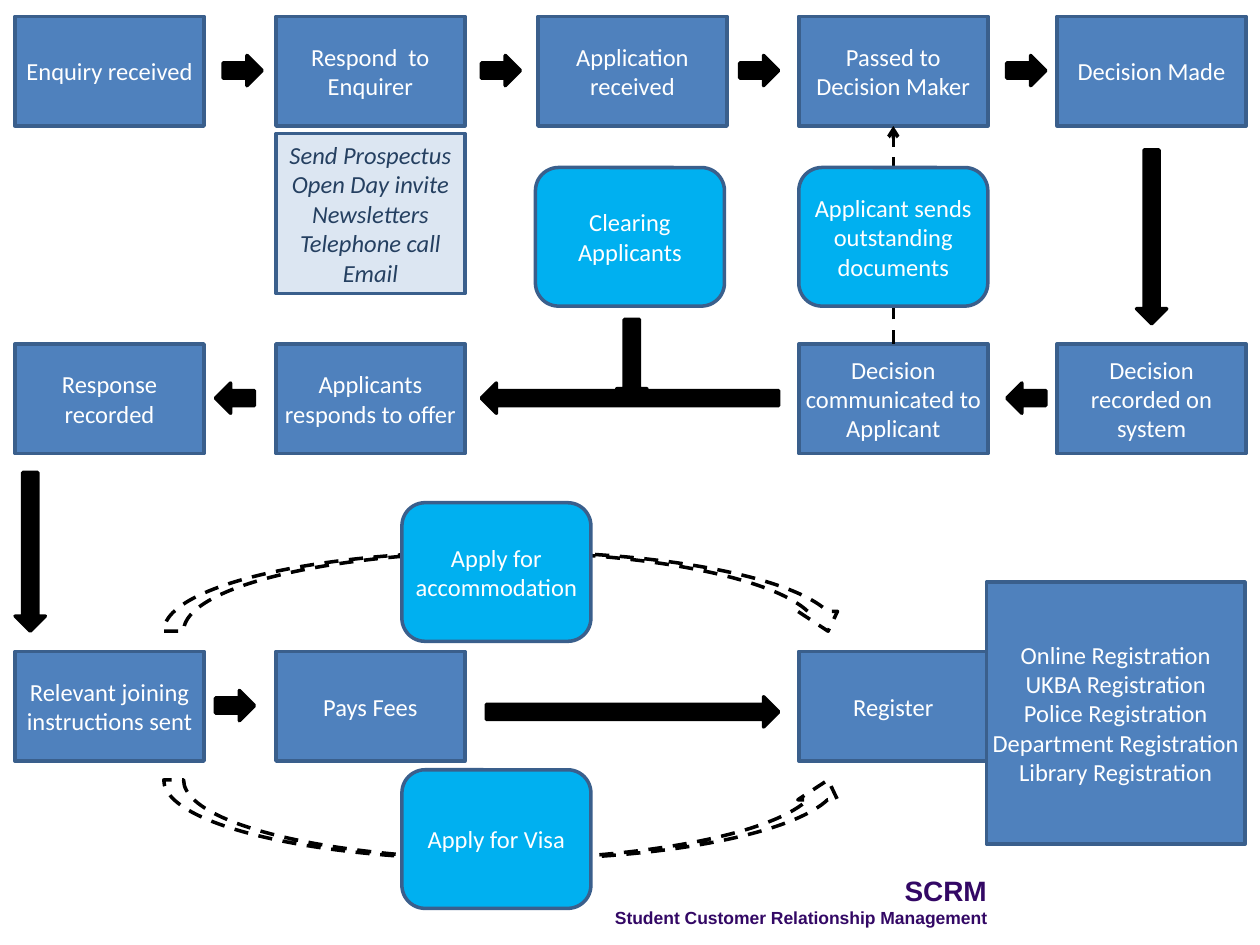
from dataclasses import dataclass

from lxml.etree import SubElement
from pptx import Presentation
from pptx.dml.color import RGBColor
from pptx.enum.dml import MSO_LINE
from pptx.enum.shapes import MSO_CONNECTOR, MSO_SHAPE
from pptx.enum.text import MSO_ANCHOR, PP_ALIGN
from pptx.oxml.ns import qn
from pptx.util import Pt


@dataclass(frozen=True)
class Theme:
    step: RGBColor = RGBColor(0x4F, 0x81, 0xBD)
    side_step: RGBColor = RGBColor(0x00, 0xB0, 0xF0)
    detail: RGBColor = RGBColor(0xDC, 0xE6, 0xF2)
    outline: RGBColor = RGBColor(0x3A, 0x5F, 0x8C)
    arrow: RGBColor = RGBColor(0x00, 0x00, 0x00)
    light_text: RGBColor = RGBColor(0xFF, 0xFF, 0xFF)
    detail_text: RGBColor = RGBColor(0x25, 0x40, 0x61)
    caption: RGBColor = RGBColor(0x33, 0x08, 0x65)
    body_font: str = "Calibri"
    caption_font: str = "Arial"
    body_size: int = 14
    caption_size: int = 16
    subcaption_size: int = 10
    line_width: int = 2


THEME = Theme()

# Flow grid, in points
COLUMNS = (8.64, 157.68, 307.44, 456.48, 604.08)
ROWS = (9.36, 196.56, 372.24)
STEP_WIDTH, STEP_HEIGHT = 108, 62.64
SIDE_HEIGHT = 79.2
ARROW_LENGTH, ARROW_THICKNESS = 22.32, 17.28

STEPS = (  # column, row, text
    (0, 0, "Enquiry received"),
    (1, 0, "Respond  to Enquirer"),
    (2, 0, "Application received"),
    (3, 0, "Passed to Decision Maker"),
    (4, 0, "Decision Made"),
    (4, 1, "Decision recorded on system"),
    (3, 1, "Decision communicated to Applicant"),
    (1, 1, "Applicants responds to offer"),
    (0, 1, "Response recorded"),
    (0, 2, "Relevant joining instructions sent"),
    (1, 2, "Pays Fees"),
    (3, 2, "Register"),
)
SIDE_STEPS = (  # left, top, text
    (306, 95.76, "Clearing Applicants"),
    (456.48, 95.76, "Applicant sends outstanding documents"),
    (229.68, 287.28, "Apply for accommodation"),
    (229.68, 439.92, "Apply for Visa"),
)
RIGHT_ARROWS = (  # left, top, length
    (127.44, 31.68, ARROW_LENGTH),
    (275.04, 31.68, ARROW_LENGTH),
    (422.64, 31.68, ARROW_LENGTH),
    (575.28, 31.68, ARROW_LENGTH),
    (123.12, 394.56, ARROW_LENGTH),
    (277.92, 398.16, 167.04),
)
LEFT_ARROWS = (
    (123.12, 218.88, ARROW_LENGTH),
    (275.04, 218.88, 169.92),
    (575.28, 218.88, ARROW_LENGTH),
)
DOWN_ARROWS = (
    (8.64, 270, 90.72),
    (649.44, 85.68, 99.36),
    (352.44, 182.52, 48.24),
)
RESPONSES = ("Send Prospectus", "Open Day invite", "Newsletters",
             "Telephone call", "Email")
REGISTRATIONS = ("Online Registration", "UKBA Registration",
                 "Police Registration", "Department Registration",
                 "Library Registration")


def add_outlined(slide, kind, left, top, width, height, fill, line):
    shape = slide.shapes.add_shape(kind, Pt(left), Pt(top), Pt(width), Pt(height))
    shape.shadow.inherit = False
    if fill is None:
        shape.fill.background()
    else:
        shape.fill.solid()
        shape.fill.fore_color.rgb = fill
    shape.line.color.rgb = line
    shape.line.width = Pt(THEME.line_width)
    return shape


def add_text_run(paragraph, text, font, size, color, bold=False, italic=False):
    run = paragraph.add_run()
    run.text = text
    run.font.name = font
    run.font.size = Pt(size)
    run.font.color.rgb = color
    run.font.bold = bold
    run.font.italic = italic


def add_box(slide, left, top, lines, width=STEP_WIDTH, height=STEP_HEIGHT,
            kind=MSO_SHAPE.FLOWCHART_PROCESS, fill=THEME.step,
            text_color=THEME.light_text, italic=False):
    box = add_outlined(slide, kind, left, top, width, height, fill, THEME.outline)
    frame = box.text_frame
    frame.word_wrap = True
    frame.vertical_anchor = MSO_ANCHOR.MIDDLE
    frame.margin_left = frame.margin_right = Pt(2.88)
    frame.margin_top = frame.margin_bottom = Pt(3.6)
    for index, line in enumerate(lines):
        paragraph = frame.add_paragraph() if index else frame.paragraphs[0]
        paragraph.alignment = PP_ALIGN.CENTER
        add_text_run(paragraph, line, THEME.body_font, THEME.body_size,
                     text_color, italic=italic)
    return box


def add_curved_arrow(slide, kind, top):
    arrow = add_outlined(slide, kind, 93.6, top, 390.96, 45.36, None, THEME.arrow)
    arrow.line.dash_style = MSO_LINE.DASH


def add_dashed_link(slide, start, end):
    """Join the top of one box to the bottom of another."""
    link = slide.shapes.add_connector(MSO_CONNECTOR.STRAIGHT, 0, 0, 0, 0)
    link.begin_connect(start, 0)
    link.end_connect(end, 2)
    link.line.color.rgb = THEME.arrow
    link.line.width = Pt(THEME.line_width)
    link.line.dash_style = MSO_LINE.DASH
    properties = link.line._get_or_add_ln()
    SubElement(properties, qn("a:tailEnd"), type="arrow")
    SubElement(properties.getparent(), qn("a:effectLst"))


def add_caption(slide):
    caption = slide.shapes.add_textbox(Pt(287.28), Pt(500.4), Pt(283.68), Pt(28.8))
    frame = caption.text_frame
    frame.word_wrap = True
    frame.vertical_anchor = MSO_ANCHOR.MIDDLE
    paragraph = frame.paragraphs[0]
    paragraph.alignment = PP_ALIGN.RIGHT
    add_text_run(paragraph, "SCRM", THEME.caption_font, THEME.caption_size,
                 THEME.caption, bold=True)
    paragraph.add_line_break()
    add_text_run(paragraph, "Student Customer Relationship Management",
                 THEME.caption_font, THEME.subcaption_size, THEME.caption, bold=True)


def main():
    presentation = Presentation()
    presentation.slide_width, presentation.slide_height = Pt(720), Pt(540)
    slide = presentation.slides.add_slide(presentation.slide_layouts[6])

    # Dashed side routes, behind the boxes
    add_curved_arrow(slide, MSO_SHAPE.CURVED_UP_ARROW, 445.68)
    add_curved_arrow(slide, MSO_SHAPE.CURVED_DOWN_ARROW, 315.36)

    # Main steps and the link back to the decision maker
    steps = {(column, row): add_box(slide, COLUMNS[column], ROWS[row], [text])
             for column, row, text in STEPS}
    add_dashed_link(slide, steps[3, 1], steps[3, 0])

    # Side steps
    for left, top, text in SIDE_STEPS:
        add_box(slide, left, top, [text], height=SIDE_HEIGHT,
                kind=MSO_SHAPE.FLOWCHART_ALTERNATE_PROCESS, fill=THEME.side_step)

    # Block arrows
    for kind, arrows in ((MSO_SHAPE.RIGHT_ARROW, RIGHT_ARROWS),
                         (MSO_SHAPE.LEFT_ARROW, LEFT_ARROWS),
                         (MSO_SHAPE.DOWN_ARROW, DOWN_ARROWS)):
        for left, top, length in arrows:
            size = (length, ARROW_THICKNESS)
            if kind == MSO_SHAPE.DOWN_ARROW:
                size = size[::-1]
            add_outlined(slide, kind, left, top, *size, THEME.arrow, THEME.arrow)

    # Detail panels
    add_box(slide, 563.76, 332.64, REGISTRATIONS, width=147.6, height=149.76)
    add_box(slide, COLUMNS[1], 76.32, RESPONSES, height=91.44, fill=THEME.detail,
            text_color=THEME.detail_text, italic=True)

    add_caption(slide)
    presentation.save("out.pptx")


if __name__ == "__main__":
    main()
